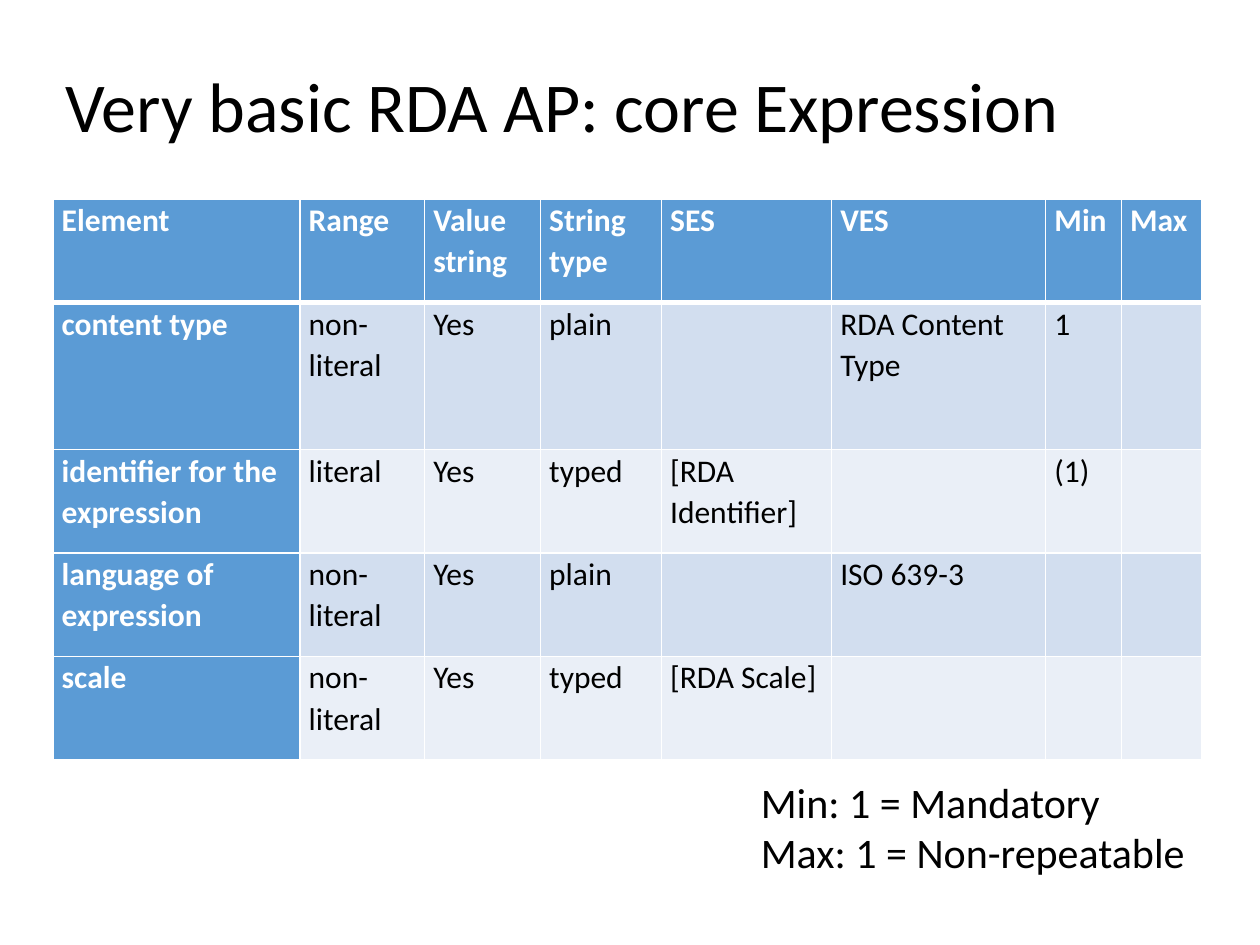
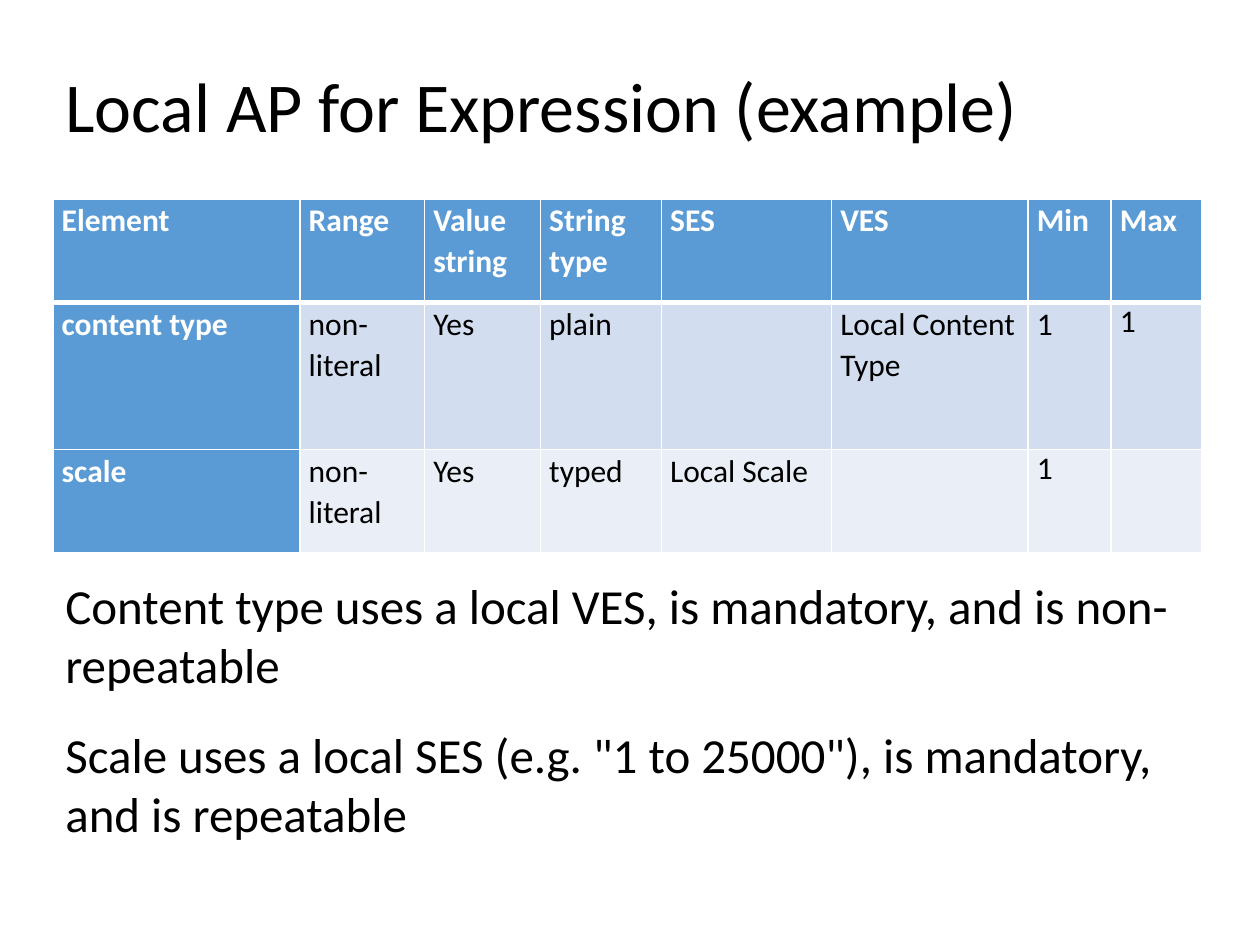
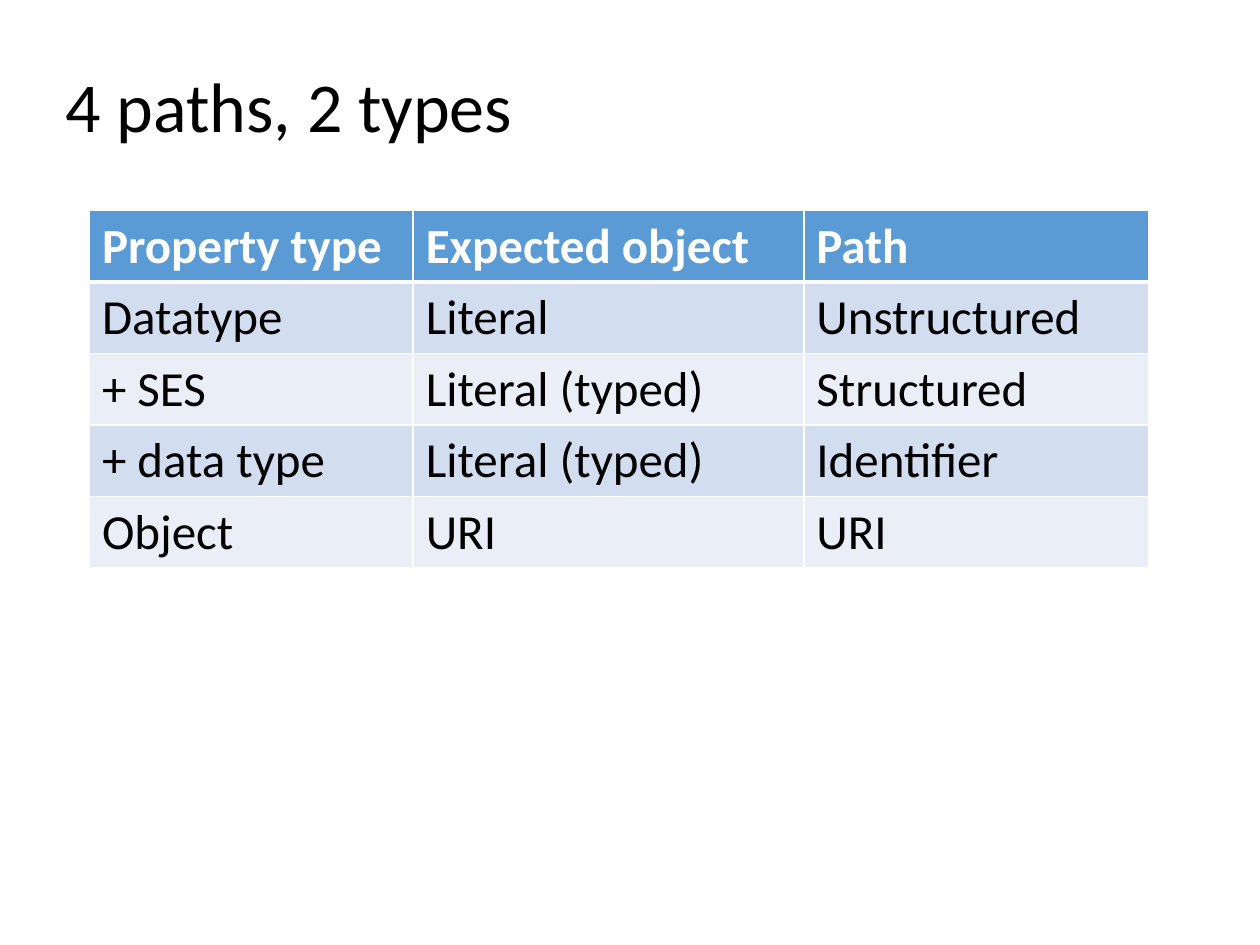
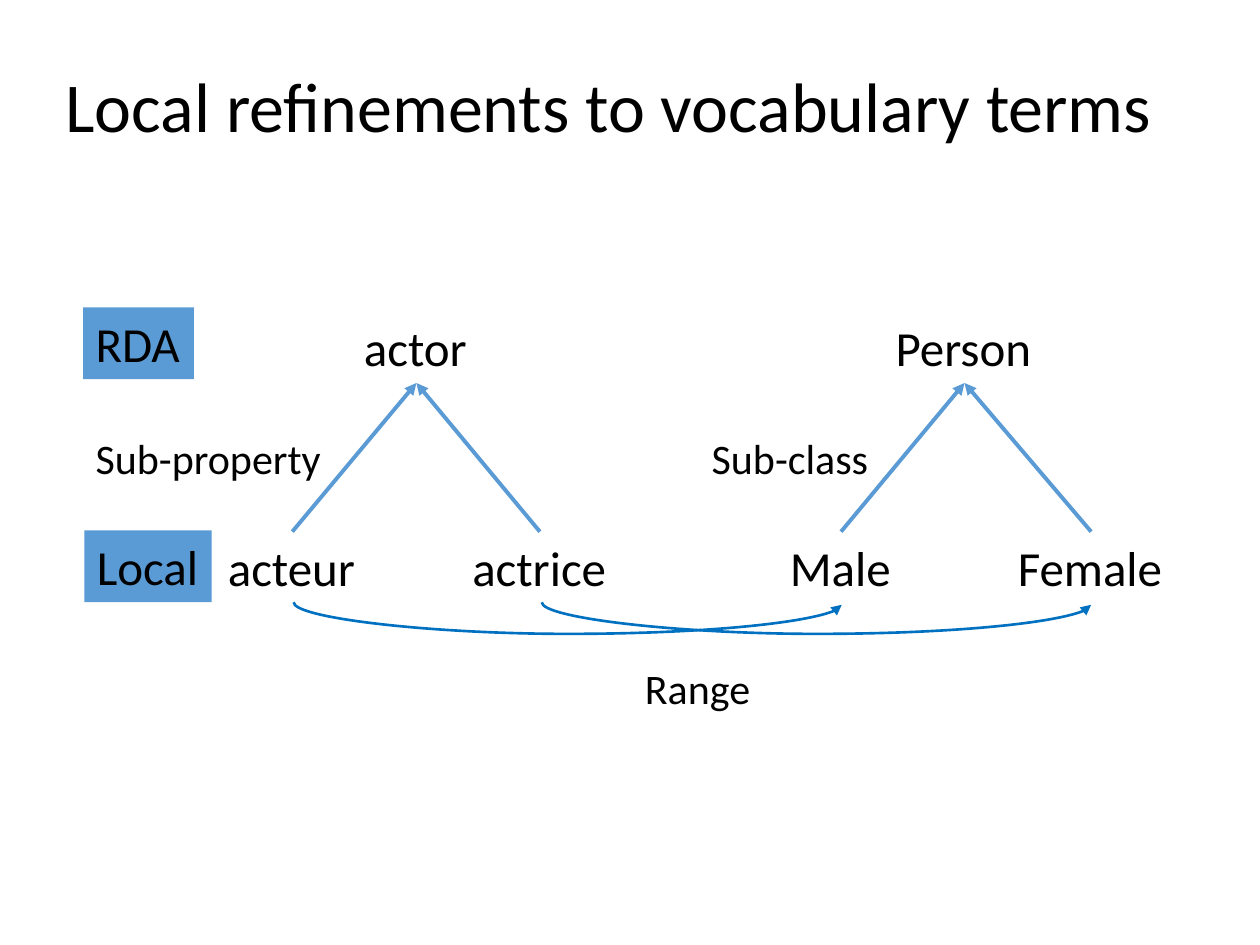
from dataclasses import dataclass

import pptx
import pptx.dml.color
import pptx.enum.shapes
import pptx.enum.text
import pptx.oxml.ns
import pptx.util
from lxml import etree

FONT = "Calibri"
BLACK, WHITE = "000000", "FFFFFF"
BLUE, LINK_BLUE = "5B9BD5", "0070C0"
BANDS = ("D2DEEF", "EAEFF7")
TITLE_SIZE, BODY_SIZE, NOTE_SIZE, CELL_SIZE = 40, 28, 24, 18
TITLE_ONLY_LAYOUT = 5
TOP, BOTTOM = 0, 2  # connection sites of a rectangle

# The slide is a grid of 100 columns by 75 rows.
WIDTH, HEIGHT = pptx.util.Inches(10), pptx.util.Inches(7.5)
COLUMN, ROW = WIDTH / 100, HEIGHT / 75
MARGIN = 4.2
LINE_ROWS = {BODY_SIZE: 5.7, NOTE_SIZE: 5}


@dataclass(frozen=True)
class Box:
    """A place on the grid, in columns and rows."""
    left: float
    top: float
    width: float
    height: float

    def emu(self) -> tuple[int, int, int, int]:
        return (round(self.left * COLUMN), round(self.top * ROW),
                round(self.width * COLUMN), round(self.height * ROW))


@dataclass(frozen=True)
class TableSpec:
    left: float
    top: float
    columns: tuple[float, ...]
    rows: tuple[float, ...]
    cells: tuple[tuple[str, ...], ...]
    size: int = CELL_SIZE
    first_column: bool = True
    side_margin: float = 0.7
    end_margin: float = 0
    spacing: float = 1.07
    single_spaced: tuple[tuple[int, int], ...] = ()


@dataclass(frozen=True)
class Label:
    text: str
    left: float
    top: float
    width: float
    size: int = BODY_SIZE
    fill: str = ""


@dataclass(frozen=True)
class Range:
    """A curved arrow that sags below its two ends."""
    start: float
    end: float
    top: float = 47.8
    drop: float = 0.2
    sag: float = 2.5


HEADER = ("Element", "Range", "Value\nstring", "String\ntype",
          "SES", "VES", "Min", "Max")
SHARED_COLUMNS = (19.6, 9.9, 9.2, 9.6, 13.5)
HEAD_ROW, TALL_ROW = 8.2, 11.7

CORE = TableSpec(
    MARGIN, 15.8, SHARED_COLUMNS + (17, 6, 6.4),
    (HEAD_ROW, TALL_ROW) + (HEAD_ROW,) * 3,
    (HEADER,
     ("content type", "non-literal", "Yes", "plain", "", "RDA Content Type", "1", ""),
     ("identifier for the expression", "literal", "Yes", "typed",
      "[RDA Identifier]", "", "(1)", ""),
     ("language of expression", "non-literal", "Yes", "plain", "", "ISO 639-3", "", ""),
     ("scale", "non-literal", "Yes", "typed", "[RDA Scale]", "", "", "")))

LOCAL = TableSpec(
    MARGIN, 15.8, SHARED_COLUMNS + (15.6, 6.6, 7.2),
    (HEAD_ROW, TALL_ROW, HEAD_ROW),
    (HEADER,
     ("content type", "non-literal", "Yes", "plain", "", "Local Content Type", "1", "1"),
     ("scale", "non-literal", "Yes", "typed", "Local Scale", "", "1", "")),
    single_spaced=((1, 7), (2, 6)))

PATHS = TableSpec(
    7.1, 16.7, (25.7, 31, 27.4), (5.67,) * 5,
    (("Property type", "Expected object", "Path"),
     ("Datatype", "Literal", "Unstructured"),
     ("+ SES", "Literal (typed)", "Structured"),
     ("+ data type", "Literal (typed)", "Identifier"),
     ("Object", "URI", "URI")),
    size=BODY_SIZE, first_column=False, side_margin=1, end_margin=0.5, spacing=1)

LOCAL_NOTES = (
    "Content type uses a local VES, is mandatory, and is non-repeatable",
    'Scale uses a local SES (e.g. "1 to 25000"), is mandatory, and is repeatable')

UPPER, LOWER, BETWEEN = 24.7, 42.2, 33.8
TERMS = (
    Label("actor", 27.9, UPPER, 10.3),
    Label("acteur", 17.1, LOWER, 12.2),
    Label("actrice", 36.5, LOWER, 12.7),
    Label("Person", 70.1, UPPER, 12.9),
    Label("Male", 61.7, LOWER, 10.1),
    Label("Female", 79.8, LOWER, 13.6),
)
REFINEMENTS = (("acteur", "actor"), ("actrice", "actor"),
               ("Male", "Person"), ("Female", "Person"))
RANGES = (Range(23.3, 66.8), Range(43, 86.6))
NOTES = (
    Label("Sub-property", 6.6, BETWEEN, 20.1, NOTE_SIZE),
    Label("Sub-class", 55.5, BETWEEN, 14.6, NOTE_SIZE),
    Label("Range", 50.2, 52.1, 10.5, NOTE_SIZE),
    Label("RDA", 6.6, 24.4, 8.8, fill=BLUE),
    Label("Local", 6.7, 42.1, 10.1, fill=BLUE),
)


def rgb(value: str) -> pptx.dml.color.RGBColor:
    return pptx.dml.color.RGBColor.from_string(value)


def write(tf, text: str, size: int, color: str = BLACK,
          bold: bool = False, spacing: float = 1) -> None:
    tf.text = text
    for p in tf.paragraphs:
        p.alignment = pptx.enum.text.PP_ALIGN.LEFT
        p.line_spacing = spacing
        p.font.name = FONT
        p.font.size = pptx.util.Pt(size)
        p.font.bold = bold
        p.font.color.rgb = rgb(color)


def fit(tf, wrap: bool) -> None:
    tf.word_wrap = wrap
    tf.auto_size = pptx.enum.text.MSO_AUTO_SIZE.SHAPE_TO_FIT_TEXT


def add_slide(prs, title: str, width: float):
    s = prs.slides.add_slide(prs.slide_layouts[TITLE_ONLY_LAYOUT])
    sp = s.shapes.title
    sp.left, sp.top, sp.width, sp.height = Box(MARGIN, 4.5, width, 7.7).emu()
    write(sp.text_frame, title, TITLE_SIZE)
    sp.text_frame.vertical_anchor = pptx.enum.text.MSO_ANCHOR.TOP
    fit(sp.text_frame, wrap=False)
    return s


def add_text(s, text: str, box: Box, size: int, wrap: bool = False):
    sp = s.shapes.add_textbox(*box.emu())
    write(sp.text_frame, text, size)
    fit(sp.text_frame, wrap)
    return sp


def add_label(s, label: Label):
    box = Box(label.left, label.top, label.width, LINE_ROWS[label.size])
    sp = add_text(s, label.text, box, label.size)
    if label.fill:
        sp.fill.solid()
        sp.fill.fore_color.rgb = rgb(label.fill)
    return sp


def set_border(cell, sides: dict[str, float]) -> None:
    """Draw white cell borders; sides maps L, R, T, B (in this order) to points."""
    tc_pr = cell._tc.get_or_add_tcPr()
    for index, (side, points) in enumerate(sides.items()):
        ln = etree.Element(pptx.oxml.ns.qn(f"a:ln{side}"), w=str(pptx.util.Pt(points)))
        fill = etree.SubElement(ln, pptx.oxml.ns.qn("a:solidFill"))
        etree.SubElement(fill, pptx.oxml.ns.qn("a:srgbClr"), val=WHITE)
        tc_pr.insert(index, ln)


def add_table(s, spec: TableSpec) -> None:
    box = Box(spec.left, spec.top, sum(spec.columns), sum(spec.rows))
    table = s.shapes.add_table(len(spec.rows), len(spec.columns), *box.emu()).table
    table.first_col = spec.first_column
    for column, width in zip(table.columns, spec.columns):
        column.width = round(width * COLUMN)
    for row, height in zip(table.rows, spec.rows):
        row.height = round(height * ROW)
    for r, texts in enumerate(spec.cells):
        for c, text in enumerate(texts):
            cell = table.cell(r, c)
            head = r == 0 or (c == 0 and spec.first_column)
            spacing = 1 if (r, c) in spec.single_spaced else spec.spacing
            write(cell.text_frame, text, spec.size, WHITE if head else BLACK,
                  head, spacing)
            cell.margin_left = cell.margin_right = round(spec.side_margin * COLUMN)
            cell.margin_top = cell.margin_bottom = round(spec.end_margin * ROW)
            cell.fill.solid()
            cell.fill.fore_color.rgb = rgb(BLUE if head else BANDS[(r - 1) % 2])
            sides = {"L": 1, "R": 1}
            sides.update({"T": 1, "B": 3} if r == 0 else {"B": 1})
            set_border(cell, sides)


def style_arrow(connector, color: str, points: float) -> None:
    connector.line.color.rgb = rgb(color)
    connector.line.width = pptx.util.Pt(points)
    ln = connector.line._get_or_add_ln()
    etree.SubElement(ln, pptx.oxml.ns.qn("a:tailEnd"), type="triangle")
    etree.SubElement(connector._element.spPr, pptx.oxml.ns.qn("a:effectLst"))


def add_refinement(s, narrower, broader) -> None:
    connector = s.shapes.add_connector(
        pptx.enum.shapes.MSO_CONNECTOR.STRAIGHT, 0, 0, 0, 0)
    connector.begin_connect(narrower, TOP)
    connector.end_connect(broader, BOTTOM)
    style_arrow(connector, BLUE, 2.25)


def add_range(s, link: Range) -> None:
    """Lay a vertical curved connector on its side so that it sags downwards."""
    span = link.end - link.start
    left = (link.start + link.end - link.drop) / 2
    top = link.top + (link.drop - span) / 2
    x, y, width, height = Box(left, top, link.drop, span).emu()
    connector = s.shapes.add_connector(
        pptx.enum.shapes.MSO_CONNECTOR.CURVE, x + width, y, x, y + height)
    sp_pr = connector._element.spPr
    sp_pr.find(pptx.oxml.ns.qn("a:xfrm")).set("rot", str(270 * 60000))
    guides = sp_pr.find(pptx.oxml.ns.qn("a:prstGeom")).find(pptx.oxml.ns.qn("a:avLst"))
    etree.SubElement(guides, pptx.oxml.ns.qn("a:gd"), name="adj1",
                     fmla=f"val {round(link.sag / link.drop * 100000)}")
    style_arrow(connector, LINK_BLUE, 1.5)


def main() -> None:
    prs = pptx.Presentation()
    prs.slide_width, prs.slide_height = WIDTH, HEIGHT

    s = add_slide(prs, "Very basic RDA AP: core Expression", 81.7)
    add_table(s, CORE)
    add_text(s, "Min: 1 = Mandatory\nMax: 1 = Non-repeatable",
             Box(59.4, 61.1, 36, 9.1), NOTE_SIZE)

    s = add_slide(prs, "Local AP for Expression (example)", 78.3)
    add_table(s, LOCAL)
    for index, note in enumerate(LOCAL_NOTES):
        add_text(s, note, Box(MARGIN, 45.2 + 11.8 * index, 91.1, 10.4),
                 BODY_SIZE, wrap=True)

    s = add_slide(prs, "4 paths, 2 types", 37.8)
    add_table(s, PATHS)

    s = add_slide(prs, "Local refinements to vocabulary terms", 89.1)
    terms = {label.text: add_label(s, label) for label in TERMS}
    for narrower, broader in REFINEMENTS:
        add_refinement(s, terms[narrower], terms[broader])
    for link in RANGES:
        add_range(s, link)
    for label in NOTES:
        add_label(s, label)

    prs.save("out.pptx")


if __name__ == "__main__":
    main()
